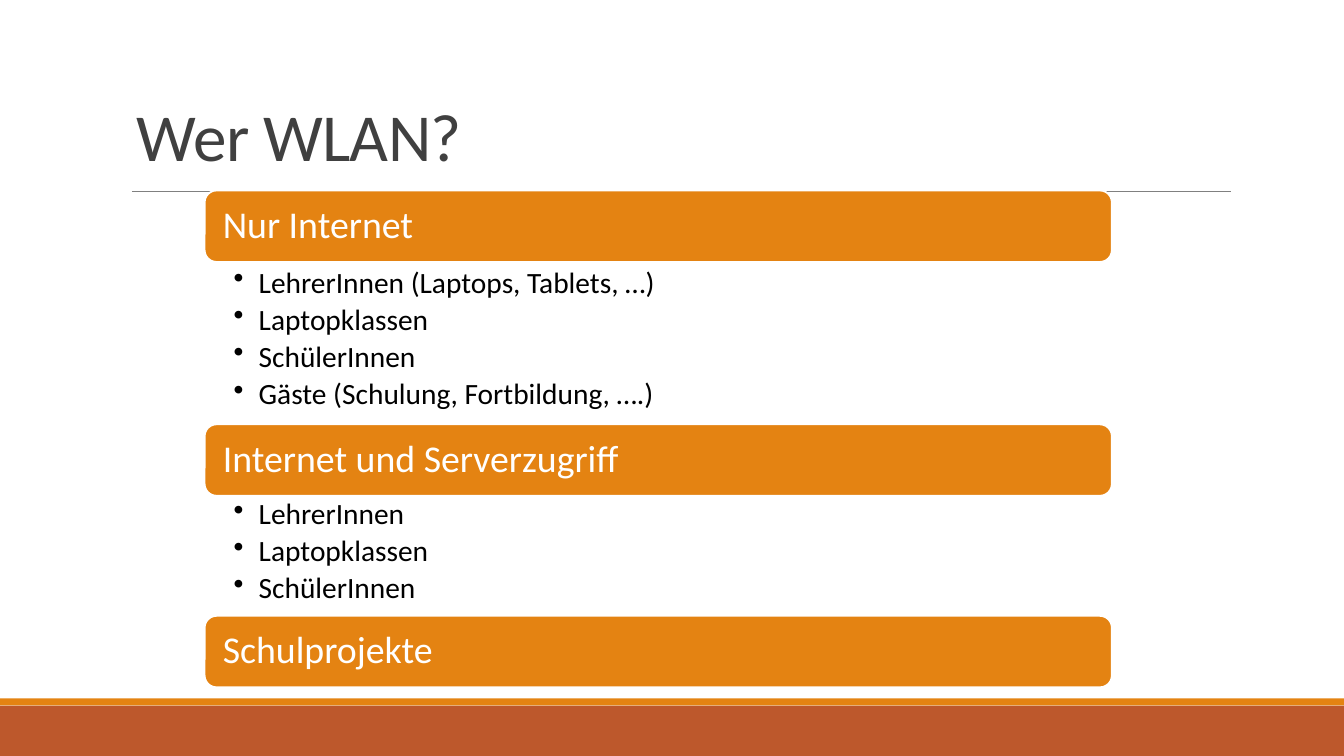
from lxml import etree
from pptx import Presentation
from pptx.dml.color import RGBColor
from pptx.enum import shapes, text
from pptx.oxml import ns
from pptx.util import Pt

theme = {
    "font": "Calibri",
    "rust": RGBColor.from_string("BD582C"),
    "orange": RGBColor.from_string("E48312"),
    "rule": RGBColor.from_string("808080"),
    "title": RGBColor.from_string("404040"),
    "white": RGBColor.from_string("FFFFFF"),
    "black": RGBColor.from_string("000000"),
    "title_size": 48,
    "head_size": 27,
    "item_size": 21,
}

deck = Presentation()
deck.slide_width, deck.slide_height = Pt(960), Pt(540)
slide = deck.slides.add_slide(deck.slide_layouts[6])


def add_box(kind, left, top, width, height, fill):
    box = slide.shapes.add_shape(kind, Pt(left), Pt(top), Pt(width), Pt(height))
    box.shadow.inherit = False
    box.fill.solid()
    box.fill.fore_color.rgb = fill
    box.line.fill.background()
    return box


def style(para, size, color, spacing):
    para.alignment = text.PP_ALIGN.LEFT
    para.line_spacing = spacing
    for run in para.runs:
        run.font.name = theme["font"]
        run.font.size = Pt(size)
        run.font.color.rgb = color


add_box(shapes.MSO_SHAPE.RECTANGLE, 0, 504, 960, 36, theme["rust"])
add_box(shapes.MSO_SHAPE.RECTANGLE, 0, 498.8, 960, 5.04, theme["orange"])

rule = slide.shapes.add_connector(
    shapes.MSO_CONNECTOR.STRAIGHT, Pt(94.3), Pt(136.8), Pt(879.1), Pt(136.8))
rule.line.color.rgb = theme["rule"]
rule.line.width = Pt(0.5)
etree.SubElement(rule.element.spPr, ns.qn("a:effectLst"))

title = slide.shapes.add_textbox(Pt(90.7), Pt(24.5), Pt(792), Pt(104.4))
frame = title.text_frame
frame.word_wrap = True
frame.vertical_anchor = text.MSO_ANCHOR.BOTTOM
frame.text = "Wer WLAN?"
style(frame.paragraphs[0], theme["title_size"], theme["title"], 0.85)
frame.paragraphs[0].runs[0].font._element.set("spc", "-50")

left, width, height = 146.2, 648, 51
groups = [
    (136.1, "Nur Internet", 188.6, 114.5,
     ["LehrerInnen (Laptops, Tablets, …)", "Laptopklassen", "SchülerInnen",
      "Gäste (Schulung, Fortbildung, ….)"]),
    (303.1, "Internet und Serverzugriff", 353.7, 85.7,
     ["LehrerInnen", "Laptopklassen", "SchülerInnen"]),
    (439.9, "Schulprojekte", 0, 0, []),
]

for top, head, start, depth, items in groups:
    bar = add_box(shapes.MSO_SHAPE.ROUNDED_RECTANGLE, left, top, width, height,
                  theme["orange"])
    bar.line.color.rgb = theme["white"]
    bar.line.width = Pt(1.25)
    frame = bar.text_frame
    frame.word_wrap = True
    frame.vertical_anchor = text.MSO_ANCHOR.MIDDLE
    frame.margin_left = frame.margin_right = Pt(10.5)
    frame.text = head
    style(frame.paragraphs[0], theme["head_size"], theme["white"], 0.9)

    if not items:
        continue
    body = slide.shapes.add_textbox(Pt(left), Pt(start), Pt(width), Pt(depth))
    frame = body.text_frame
    frame.word_wrap = True
    frame.margin_left, frame.margin_right = Pt(20.6), Pt(15)
    frame.margin_top = frame.margin_bottom = Pt(2.7)
    frame.text = "\n".join(items)
    for para in frame.paragraphs:
        props = para._p.get_or_add_pPr()
        props.set("marL", str(Pt(18)))
        props.set("indent", str(Pt(-18)))
        etree.SubElement(props, ns.qn("a:buChar")).set("char", "•")
        para.level = 1
        para.space_after = Pt(3.8)
        style(para, theme["item_size"], theme["black"], 0.9)

deck.save("out.pptx")
